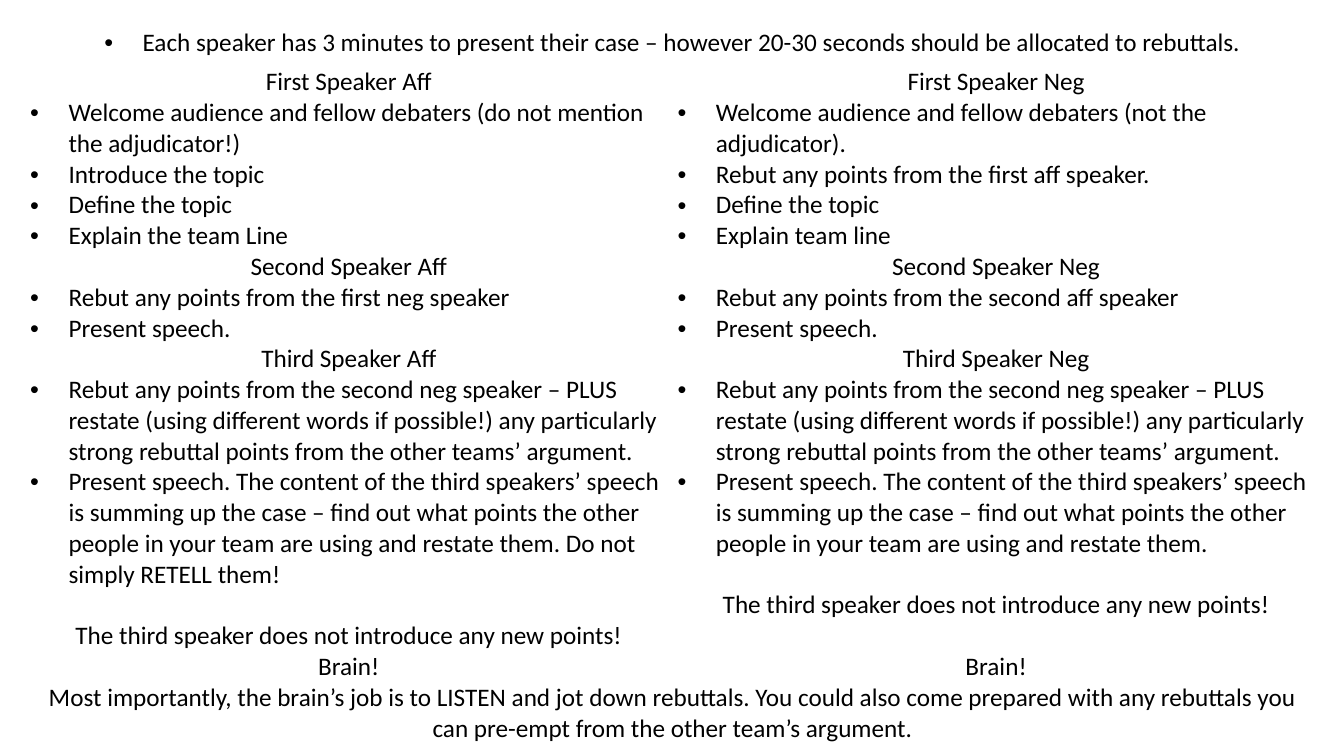
from lxml import etree
from pptx import Presentation
from pptx.dml.color import RGBColor
from pptx.enum.text import PP_ALIGN
from pptx.oxml.ns import qn
from pptx.util import Inches, Pt

LEFT, CENTER = PP_ALIGN.LEFT, PP_ALIGN.CENTER
BLACK = RGBColor(0, 0, 0)
WHITE = RGBColor(255, 255, 255)
WIDTH, HEIGHT = Inches(13.33), Inches(7.5)
TABLE_LEFT = Inches(0.25)
COLUMN = Inches(6.42)
LINE = Inches(0.27)
HANG = Inches(0.38)
GAP = Pt(22)
FONT = {"name": "Calibri", "size": Pt(18)}
MARGINS = {"margin_left": Inches(0.05), "margin_right": Inches(0.05),
           "margin_top": 0, "margin_bottom": 0}

TIMING = ("Each speaker has 3 minutes to present their case – however "
          "20-30 seconds should be allocated to rebuttals.")
RESTATE = ("Rebut any points from the second neg speaker – PLUS restate (using "
           "different words if possible!) any particularly strong rebuttal "
           "points from the other teams’ argument.")
SUM_UP = ("Present speech. The content of the third speakers’ speech is summing "
          "up the case – find out what points the other people in your team "
          "are using and restate them.")
NO_NEW = "The third speaker does not introduce any new points!"
LISTEN = ("Most importantly, the brain’s job is to LISTEN and jot down rebuttals. "
          "You could also come prepared with any rebuttals you can pre-empt "
          "from the other team’s argument.")
SIDES = ("Aff", "Neg")
SPEAKERS = [
    ("First", 5,
     ["Welcome audience and fellow debaters (do not mention the adjudicator!)",
      "Introduce the topic", "Define the topic", "Explain the team Line"],
     ["Welcome audience and fellow debaters (not the adjudicator).",
      "Rebut any points from the first aff speaker.",
      "Define the topic", "Explain team line"]),
    ("Second", 2,
     ["Rebut any points from the first neg speaker", "Present speech."],
     ["Rebut any points from the second aff speaker", "Present speech."]),
    ("Third", 9,
     [RESTATE, SUM_UP + " Do not simply RETELL them!"],
     [RESTATE, SUM_UP]),
]


def set_all(target, values):
    """Set every attribute in a dict of format values."""
    for name, value in values.items():
        setattr(target, name, value)


def add_bullet(p):
    """Give a paragraph a hanging round bullet."""
    pPr = p._p.get_or_add_pPr()
    pPr.set("marL", str(HANG))
    pPr.set("indent", str(-HANG))
    etree.SubElement(pPr, qn("a:buFont"), typeface="Arial")
    etree.SubElement(pPr, qn("a:buChar"), char="•")


def format_cell(cell):
    """Set the margins, white borders and empty fill of a cell."""
    set_all(cell, MARGINS)
    tcPr = cell._tc.get_or_add_tcPr()
    for side in "LRTB":
        ln = etree.SubElement(tcPr, qn(f"a:ln{side}"), w=str(Pt(1)))
        fill = etree.SubElement(ln, qn("a:solidFill"))
        etree.SubElement(fill, qn("a:srgbClr"), val=str(WHITE))
    cell.fill.background()


def write(cell, texts, align=LEFT, bullet=False, space=None):
    """Append paragraphs to a cell, using its first one if it is empty."""
    tf = cell.text_frame
    for text in texts:
        p = tf.add_paragraph() if tf.text else tf.paragraphs[0]
        r = p.add_run()
        r.text = text
        set_all(r.font, FONT)
        r.font.color.rgb = BLACK
        set_all(p, {"alignment": align, "space_before": space})
        if bullet:
            add_bullet(p)


def add_table(s, lines):
    """Add the two-column table with row heights given in text lines."""
    frame = s.shapes.add_table(len(lines), 2, TABLE_LEFT, 0,
                               2 * COLUMN, int(sum(lines) * LINE))
    table = frame.table
    set_all(table, {"first_row": False, "horz_banding": False})
    for column in table.columns:
        column.width = COLUMN
    for row, count in zip(table.rows, lines):
        row.height = int(count * LINE)
        for cell in row.cells:
            format_cell(cell)
    return table


def merge_row(table, row):
    """Join both cells of a row and return the joined cell."""
    cell = table.cell(row, 0)
    cell.merge(table.cell(row, 1))
    return cell


def main():
    """Build the debate roles slide."""
    prs = Presentation()
    set_all(prs, {"slide_width": WIDTH, "slide_height": HEIGHT})
    s = prs.slides.add_slide(prs.slide_layouts[6])

    lines = [1, 1.45]
    for _, count, *_ in SPEAKERS:
        lines += [1, count]
    table = add_table(s, lines + [1, 2])

    spacer = merge_row(table, 0).text_frame.paragraphs[0]
    etree.SubElement(spacer._p, qn("a:endParaRPr"), sz="1600")
    write(merge_row(table, 1), [TIMING], CENTER, bullet=True)

    for i, (order, _, *duties) in enumerate(SPEAKERS):
        row = 2 + 2 * i
        for col, side in enumerate(SIDES):
            write(table.cell(row, col), [f"{order} Speaker {side}"], CENTER)
            write(table.cell(row + 1, col), duties[col], bullet=True)

    brain = len(lines)
    for col in range(len(SIDES)):
        write(table.cell(brain - 1, col), [NO_NEW], CENTER, space=GAP)
        write(table.cell(brain, col), ["Brain!"], CENTER)
    write(merge_row(table, brain + 1), [LISTEN], CENTER)

    prs.save("out.pptx")


if __name__ == "__main__":
    main()
